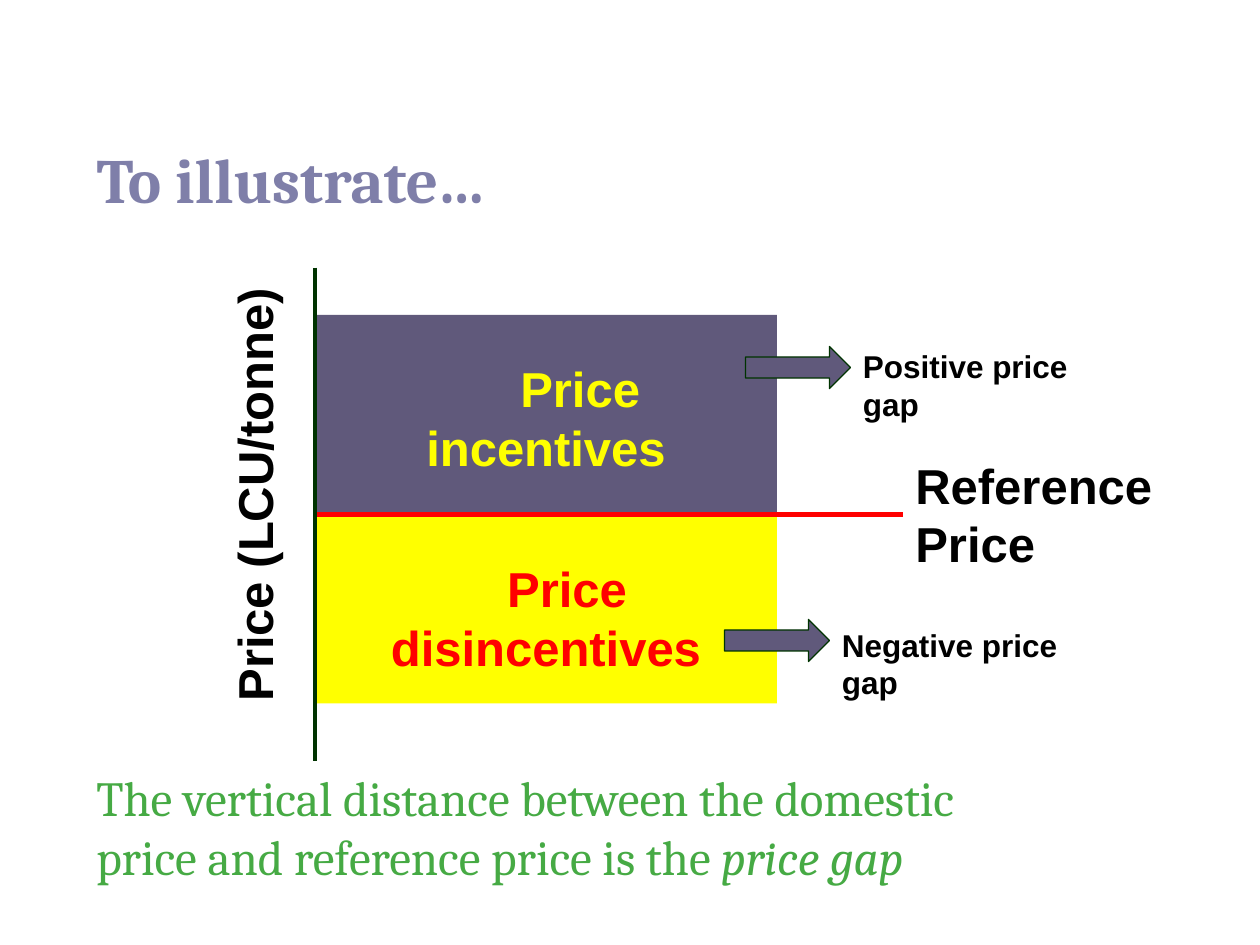
"""Build the slide that illustrates price incentives, disincentives and the price gap."""
from lxml.etree import SubElement
from pptx import Presentation
from pptx.dml.color import RGBColor
from pptx.enum.shapes import MSO_CONNECTOR, MSO_SHAPE
from pptx.enum.text import MSO_ANCHOR, MSO_AUTO_SIZE, PP_ALIGN
from pptx.oxml.ns import qn
from pptx.util import Pt

LAVENDER = RGBColor(0x7F, 0x7F, 0xA9)
PURPLE = RGBColor(0x60, 0x59, 0x7B)
YELLOW = RGBColor(0xFF, 0xFF, 0x00)
RED = RGBColor(0xFF, 0x00, 0x00)
GREEN = RGBColor(0x46, 0xAA, 0x44)
DARK_GREEN = RGBColor(0x00, 0x33, 0x00)
BLACK = RGBColor(0x00, 0x00, 0x00)


def write(para, text, font="Arial", size=28, color=BLACK, bold=True, italic=False):
    """Add a formatted span of text to a paragraph."""
    span = para.add_run()
    span.text = text
    span.font.name = font
    span.font.size = Pt(size)
    span.font.color.rgb = color
    span.font.bold = bold
    span.font.italic = italic


class SlideBuilder:
    """Hold the slide and its style, and draw each kind of element."""

    serif = "Cambria"

    def __init__(self, deck):
        """Add a title-only slide to the deck."""
        self.page = deck.slides.add_slide(deck.slide_layouts[5])

    def title(self, text, left, top, width, height):
        """Fill and place the title placeholder."""
        box = self.page.shapes.title
        box.left, box.top, box.width, box.height = map(Pt, (left, top, width, height))
        frame = box.text_frame
        frame.auto_size = MSO_AUTO_SIZE.NONE
        frame.vertical_anchor = MSO_ANCHOR.MIDDLE
        para = frame.paragraphs[0]
        para.alignment = PP_ALIGN.LEFT
        write(para, text, font=self.serif, size=36, color=LAVENDER)

    def label(self, text, left, top, width, height, **style):
        """Add a wrapped text box."""
        box = self.page.shapes.add_textbox(*map(Pt, (left, top, width, height)))
        box.text_frame.word_wrap = True
        write(box.text_frame.paragraphs[0], text, **style)
        return box

    def axis_label(self, text, left, top, width, height):
        """Add a text box that reads from bottom to top."""
        frame = self.label(text, left, top, width, height).text_frame
        frame.word_wrap = False
        frame.auto_size = MSO_AUTO_SIZE.SHAPE_TO_FIT_TEXT
        frame._txBody.bodyPr.set("vert", "vert270")

    def shape(self, kind, left, top, width, height, fill):
        """Add a filled shape without outline or shadow."""
        shape = self.page.shapes.add_shape(kind, *map(Pt, (left, top, width, height)))
        shape.shadow.inherit = False
        shape.fill.solid()
        shape.fill.fore_color.rgb = fill
        shape.line.fill.background()
        return shape

    def zone(self, text, top, height, fill, color, indent):
        """Add a price zone whose first line is indented."""
        frame = self.shape(MSO_SHAPE.RECTANGLE, 180, top, 264, height, fill).text_frame
        frame.word_wrap = True
        frame.vertical_anchor = MSO_ANCHOR.TOP
        frame.margin_top = Pt(25)
        frame.margin_left = frame.margin_right = Pt(10)
        para = frame.paragraphs[0]
        para.alignment = PP_ALIGN.CENTER
        para._p.get_or_add_pPr().set("indent", str(Pt(indent)))
        write(para, text, color=color)

    def arrow(self, left, top):
        """Add an outlined arrow that points to a gap label."""
        arrow = self.shape(MSO_SHAPE.RIGHT_ARROW, left, top, 60, 24, PURPLE)
        arrow.line.color.rgb = DARK_GREEN
        arrow.line.width = Pt(0.75)

    def line(self, start, end, color, weight):
        """Add a straight line between two points."""
        line = self.page.shapes.add_connector(MSO_CONNECTOR.STRAIGHT, *map(Pt, start + end))
        line.line.color.rgb = color
        line.line.width = Pt(weight)
        SubElement(line._element.spPr, qn("a:effectLst"))
        return line


def main():
    """Draw the slide and save the deck."""
    deck = Presentation()
    deck.slide_width, deck.slide_height = Pt(720), Pt(540)
    slide = SlideBuilder(deck)
    slide.title("To illustrate…", 48, 78, 648, 48)

    slide.zone("Price incentives", 180, 114, PURPLE, YELLOW, indent=39)
    slide.zone("Price disincentives", 294, 108, YELLOW, RED, indent=24)
    reference = slide.label("Reference Price", 516, 256.5, 156, 75)

    closing = slide.label(
        "The vertical distance between the domestic price and reference price is the ",
        48, 435, 546, 75, font=slide.serif, color=GREEN, bold=False)
    write(closing.text_frame.paragraphs[0], "price gap",
          font=slide.serif, color=GREEN, bold=False, italic=True)

    slide.axis_label("Price (LCU/tonne)", 124.5, 162, 48, 246)
    reference_line = slide.line((180, 294), (516, 294), RED, 3)
    reference_line.end_connect(reference, 1)

    gaps = (("Negative price gap", 414, 354, 354), ("Positive price gap", 426, 198, 195))
    for text, left, arrow_top, label_top in gaps:
        slide.arrow(left, arrow_top)
        slide.label(text, left + 60, label_top, 160, 29, size=18)

    slide.line((180, 153), (180, 435), DARK_GREEN, 2.25)
    deck.save("out.pptx")


if __name__ == "__main__":
    main()
